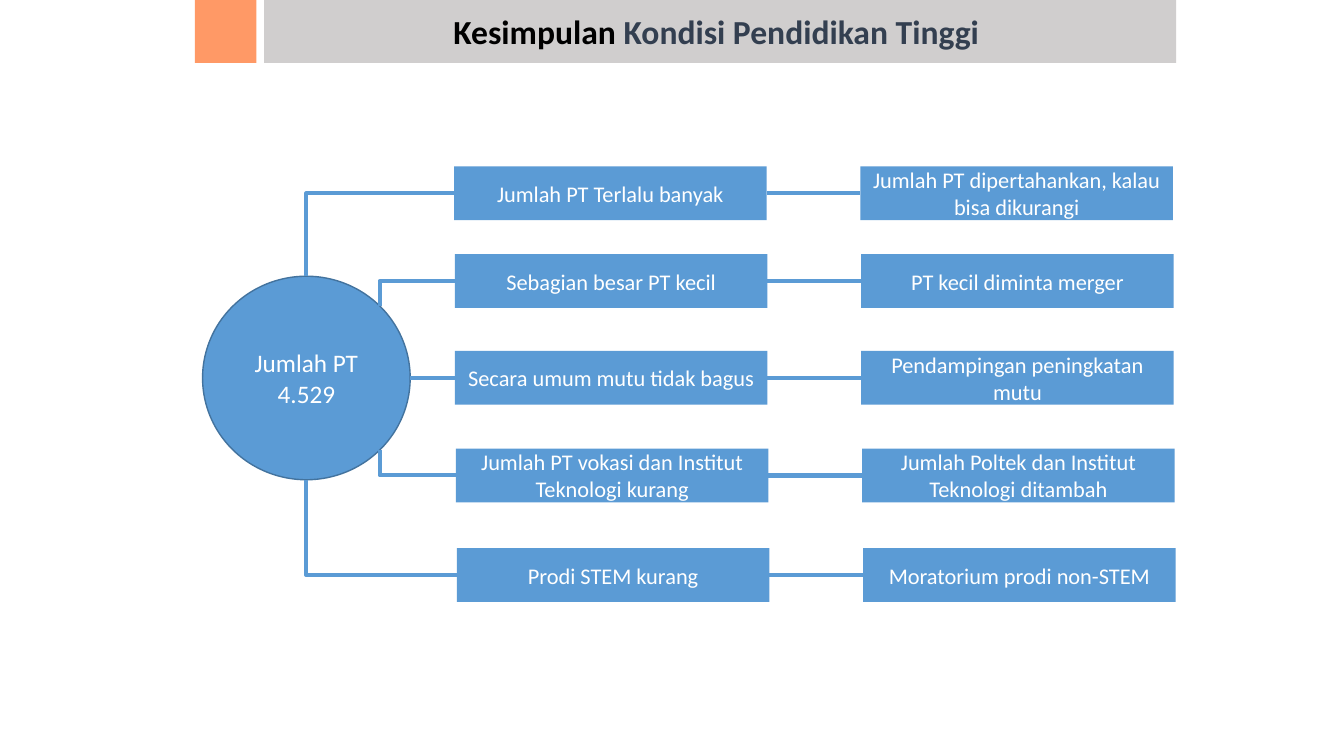
from dataclasses import dataclass
from math import cos, radians, sin
from typing import Any

from lxml import etree
from pptx import Presentation
from pptx.dml.color import RGBColor
from pptx.enum.shapes import MSO_CONNECTOR, MSO_SHAPE
from pptx.enum.text import MSO_ANCHOR, MSO_AUTO_SIZE, PP_ALIGN
from pptx.oxml.ns import qn
from pptx.util import Pt

RECTANGLE, OVAL = MSO_SHAPE.RECTANGLE, MSO_SHAPE.OVAL
STRAIGHT, ELBOW = MSO_CONNECTOR.STRAIGHT, MSO_CONNECTOR.ELBOW
CENTER, MIDDLE, NO_AUTOFIT = PP_ALIGN.CENTER, MSO_ANCHOR.MIDDLE, MSO_AUTO_SIZE.NONE


@dataclass(frozen=True)
class Theme:
    font: str = "Calibri"
    blue: str = "5B9BD5"
    outline: str = "43739E"
    orange: str = "FF9966"
    gray: str = "D0CECE"
    black: str = "000000"
    navy: str = "333F50"
    white: str = "FFFFFF"
    title_size: float = 24
    hub_size: float = 18
    box_size: float = 16
    outline_width: float = 1
    connector_width: float = 3


@dataclass(frozen=True)
class Box:
    left: float
    top: float
    width: float
    height: float

    @property
    def right(self) -> float:
        return self.left + self.width

    @property
    def middle(self) -> float:
        return self.top + self.height / 2


@dataclass(frozen=True)
class Row:
    left: float
    top: float
    angle: float
    problem: str
    action: str


@dataclass(frozen=True)
class Run:
    text: str
    color: str


THEME = Theme()
TITLE = Box(188.6, 0, 651.6, 45)
ACCENT = Box(139.2, 0, 43.9, 45)
HUB = Box(144.7, 197.3, 148.3, 145.4)
BOX_WIDTH, BOX_HEIGHT, COLUMN_STEP = 223.2, 38.4, 290.2
TITLE_RUNS = [Run("Kesimpulan ", THEME.black), Run("Kondisi Pendidikan Tinggi ", THEME.navy)]
HUB_LINES = ["Jumlah PT", "4.529"]
ROWS = [
    Row(324.4, 118.9, 90, "Jumlah PT Terlalu banyak",
        "Jumlah PT dipertahankan, kalau bisa dikurangi"),
    Row(325, 181.6, 45, "Sebagian besar PT kecil", "PT kecil diminta merger"),
    Row(325, 250.7, 0, "Secara umum mutu tidak bagus", "Pendampingan peningkatan mutu"),
    Row(325.7, 320.4, -45, "Jumlah PT vokasi dan Institut Teknologi kurang",
        "Jumlah Poltek dan Institut Teknologi ditambah"),
    Row(326.4, 391.6, -90, "Prodi STEM kurang", "Moratorium prodi non-STEM"),
]


def apply_format(target: Any, values: dict[str, Any]) -> None:
    for name, value in values.items():
        setattr(target, name, value)


def place(shape: Any, box: Box) -> None:
    apply_format(shape, {name: Pt(getattr(box, name)) for name in ("left", "top", "width", "height")})


def fill_shape(shape: Any, color: str) -> None:
    shape.fill.solid()
    shape.fill.fore_color.rgb = RGBColor.from_string(color)


def write_text(shape: Any, paragraphs: list[list[Run]], size: float, bold: bool = False) -> None:
    frame = shape.text_frame
    apply_format(frame, {"word_wrap": True, "auto_size": NO_AUTOFIT, "vertical_anchor": MIDDLE})
    for index, runs in enumerate(paragraphs):
        paragraph = frame.add_paragraph() if index else frame.paragraphs[0]
        paragraph.alignment = CENTER
        for content in runs:
            run = paragraph.add_run()
            run.text = content.text
            apply_format(run.font, {"name": THEME.font, "size": Pt(size), "bold": bold})
            run.font.color.rgb = RGBColor.from_string(content.color)


def add_block(slide: Any, kind: Any, box: Box, color: str) -> Any:
    shape = slide.shapes.add_shape(kind, 0, 0, 0, 0)
    place(shape, box)
    shape.shadow.inherit = False
    fill_shape(shape, color)
    shape.line.fill.background()
    return shape


def add_box(slide: Any, box: Box, text: str) -> None:
    shape = add_block(slide, RECTANGLE, box, THEME.blue)
    write_text(shape, [[Run(text, THEME.white)]], THEME.box_size)


def add_link(slide: Any, start: tuple[float, float], end: tuple[float, float], kind: Any = STRAIGHT) -> None:
    connector = slide.shapes.add_connector(kind, *map(Pt, start + end))
    connector.line.width = Pt(THEME.connector_width)
    connector.line.color.rgb = RGBColor.from_string(THEME.blue)
    properties = connector._element.spPr
    etree.SubElement(properties, qn("a:effectLst"))
    if kind == ELBOW:
        properties.find(qn("a:prstGeom")).set("prst", "bentConnector2")


def add_title(slide: Any) -> None:
    title = slide.shapes.title
    place(title, TITLE)
    fill_shape(title, THEME.gray)
    write_text(title, [TITLE_RUNS], THEME.title_size, bold=True)
    add_block(slide, RECTANGLE, ACCENT, THEME.orange)


def add_hub(slide: Any) -> None:
    hub = add_block(slide, OVAL, HUB, THEME.blue)
    hub.line.width = Pt(THEME.outline_width)
    hub.line.color.rgb = RGBColor.from_string(THEME.outline)
    write_text(hub, [[Run(line, THEME.white)] for line in HUB_LINES], THEME.hub_size)


def add_row(slide: Any, row: Row) -> None:
    problem = Box(row.left, row.top, BOX_WIDTH, BOX_HEIGHT)
    action = Box(row.left + COLUMN_STEP, row.top, BOX_WIDTH, BOX_HEIGHT)
    middle = problem.middle
    angle = radians(row.angle)
    hub_x = HUB.left + HUB.width / 2 * (1 + cos(angle))
    hub_y = HUB.middle - HUB.height / 2 * sin(angle)
    add_box(slide, problem, row.problem)
    add_box(slide, action, row.action)
    if row.angle:
        add_link(slide, (problem.left, middle), (hub_x, hub_y), ELBOW)
    else:
        add_link(slide, (HUB.right, middle), (problem.left, middle))
    add_link(slide, (problem.right, middle), (action.left, middle))


def main() -> None:
    presentation = Presentation()
    apply_format(presentation, {"slide_width": Pt(960), "slide_height": Pt(540)})
    slide = presentation.slides.add_slide(presentation.slide_layouts.get_by_name("Title Only"))
    add_title(slide)
    add_hub(slide)
    for row in ROWS:
        add_row(slide, row)
    presentation.save("out.pptx")


if __name__ == "__main__":
    main()
